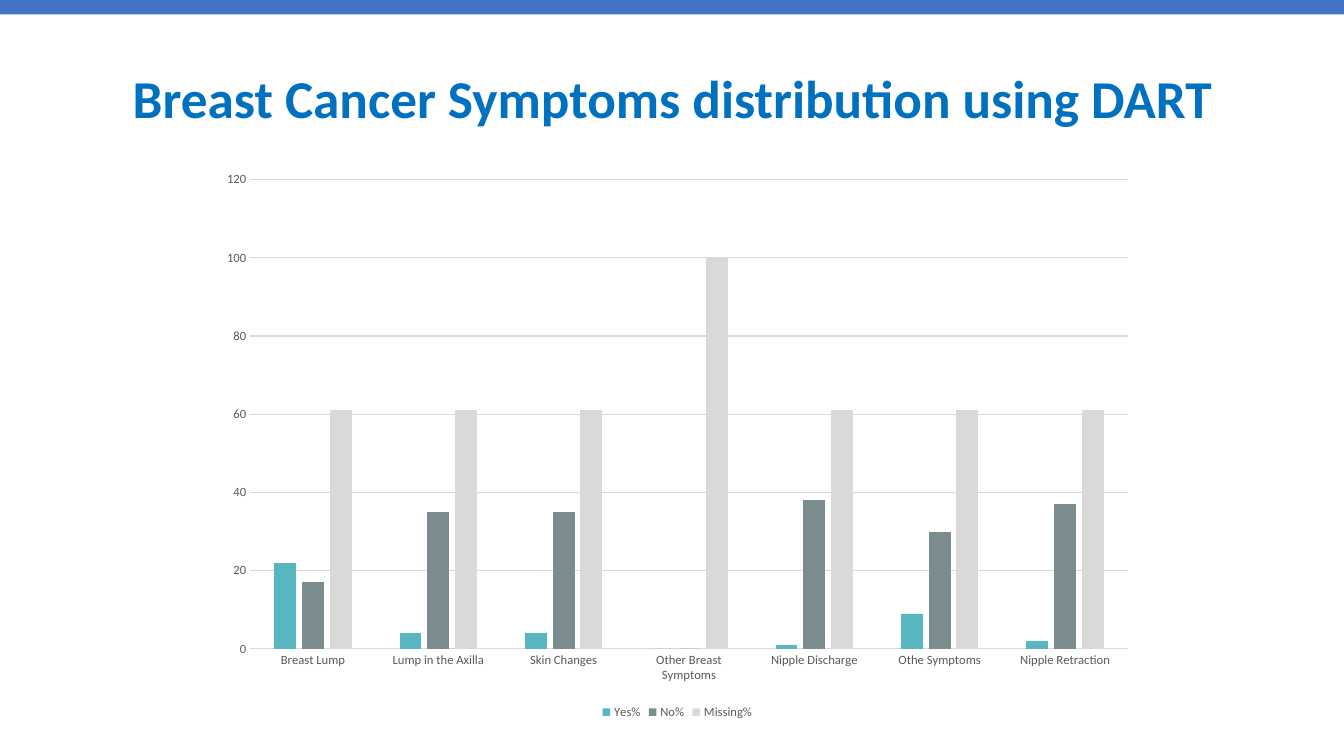
from pptx import Presentation, util as u
from pptx.chart.data import CategoryChartData
from pptx.dml.color import RGBColor
from pptx.enum import chart as charts, shapes, text

WIDTH, HEIGHT = u.Inches(13.33), u.Inches(7.5)
FONT = "Calibri"
GREY, PALE = "595959", "D9D9D9"

SYMPTOMS = ["Breast Lump", "Lump in the Axilla", "Skin Changes",
            "Other Breast Symptoms", "Nipple Discharge", "Othe Symptoms",
            "Nipple Retraction"]
ANSWERS = [
    ("Yes%", "58B6C0", (22, 4, 4, 0, 1, 9, 2)),
    ("No%", "7A8C8E", (17, 35, 35, 0, 38, 30, 37)),
    ("Missing%", PALE, (61, 61, 61, 100, 61, 61, 61)),
]


def share(left, top, width, height):
    return (round(WIDTH * left), round(HEIGHT * top),
            round(WIDTH * width), round(HEIGHT * height))


def paint(target, color):
    target.solid()
    target.fore_color.rgb = RGBColor.from_string(color)


def style_font(font, size, color, bold=False):
    font.name = FONT
    font.size = u.Pt(size)
    font.bold = bold
    font.color.rgb = RGBColor.from_string(color)


def write(para, content, align, spacing, after, **style):
    para.alignment = align
    para.line_spacing = spacing
    para.space_after = u.Pt(after)
    span = para.add_run()
    span.text = content
    style_font(span.font, **style)


def add_band(page, box):
    band = page.shapes.add_shape(shapes.MSO_SHAPE.RECTANGLE, *box)
    band.shadow.inherit = False
    paint(band.fill, "4472C4")
    band.line.fill.background()


def add_title(page, box):
    title = page.shapes.title
    title.left, title.top, title.width, title.height = box
    frame = title.text_frame
    frame.word_wrap = True
    frame.auto_size = text.MSO_AUTO_SIZE.NONE
    frame.vertical_anchor = text.MSO_ANCHOR.BOTTOM
    write(frame.paragraphs[0], "Breast Cancer Symptoms distribution using DART",
          text.PP_ALIGN.CENTER, 0.9, 6, size=38, color="0070C0", bold=True)


def style_line(line, color):
    paint(line.fill, color)
    line.width = u.Pt(0.75)


def style_axes(chart):
    for axis in (chart.category_axis, chart.value_axis):
        axis.major_tick_mark = charts.XL_TICK_MARK.NONE
        axis.minor_tick_mark = charts.XL_TICK_MARK.NONE
        style_font(axis.tick_labels.font, 9, GREY)
    style_line(chart.category_axis.format.line, PALE)
    values = chart.value_axis
    values.format.line.fill.background()
    values.minimum_scale, values.maximum_scale, values.major_unit = 0, 120, 20
    values.has_major_gridlines = True
    style_line(values.major_gridlines.format.line, PALE)


def add_symptom_chart(page, box):
    data = CategoryChartData(number_format="General")
    data.categories = SYMPTOMS
    for name, _, percentages in ANSWERS:
        data.add_series(name, percentages)
    chart = page.shapes.add_chart(
        charts.XL_CHART_TYPE.COLUMN_CLUSTERED, *box, data).chart
    chart.has_title = False
    style_font(chart.font, 10, "000000")
    style_axes(chart)
    chart.has_legend = True
    chart.legend.position = charts.XL_LEGEND_POSITION.BOTTOM
    chart.legend.include_in_layout = False
    style_font(chart.legend.font, 9, GREY)
    plot = chart.plots[0]
    plot.vary_by_categories = False
    plot.gap_width, plot.overlap = 219, -27
    for series, (_, color, _) in zip(plot.series, ANSWERS):
        paint(series.format.fill, color)
        series.invert_if_negative = False


def main():
    deck = Presentation()
    deck.slide_width, deck.slide_height = WIDTH, HEIGHT
    page = deck.slides.add_slide(deck.slide_layouts[5])
    paint(page.background.fill, "FFFFFF")
    add_title(page, share(0.069, 0.043, 0.863, 0.136))
    add_band(page, share(0, 0, 1, 0.019))
    add_symptom_chart(page, share(0.155, 0.213, 0.698, 0.744))
    deck.save("out.pptx")


if __name__ == "__main__":
    main()
